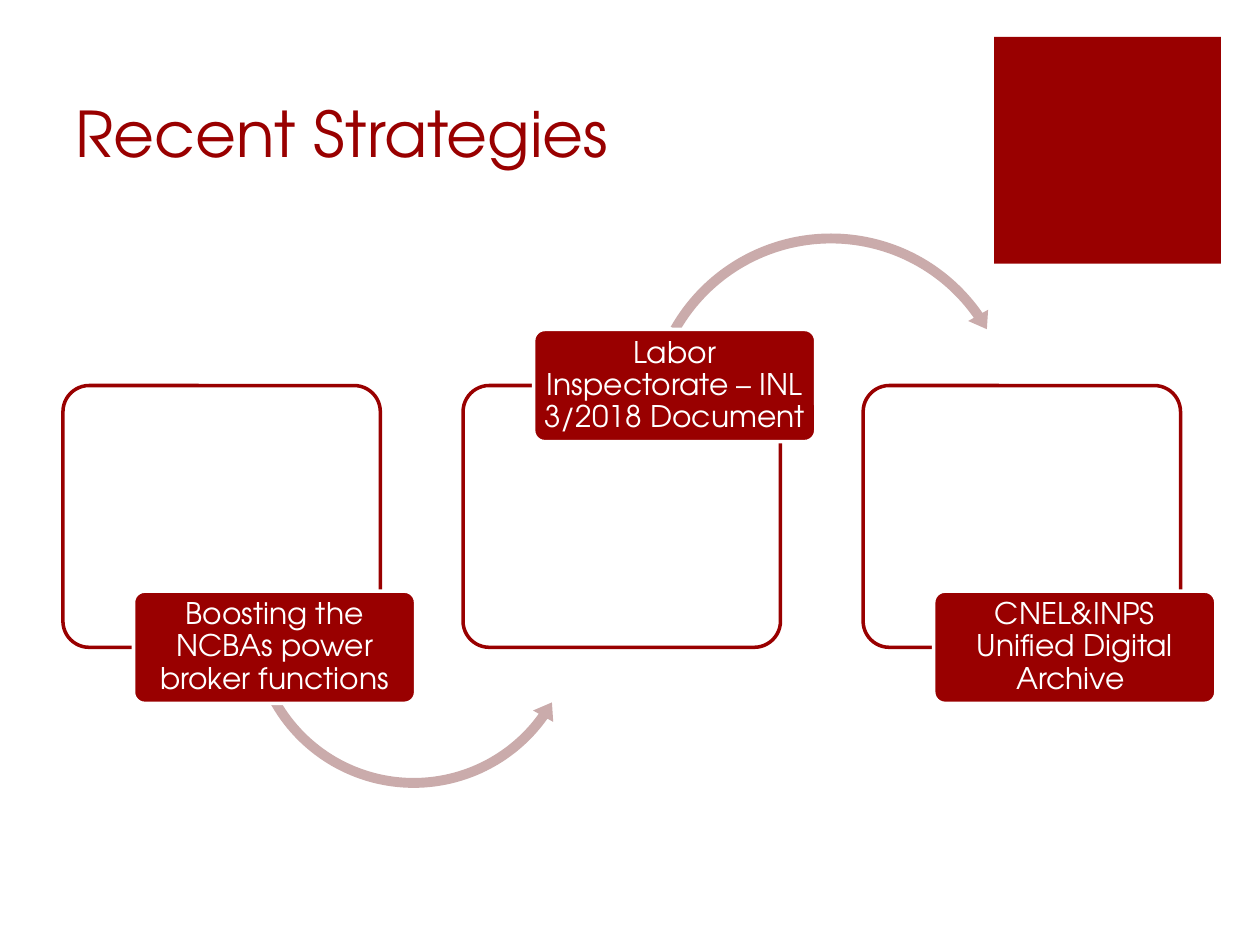
from pptx import Presentation
from pptx.util import Inches, Pt
from pptx.dml.color import RGBColor
from pptx.enum.shapes import MSO_SHAPE as Kind
from pptx.enum.text import PP_ALIGN as Align, MSO_ANCHOR as Anchor
from pptx.oxml.ns import qn
from lxml.etree import SubElement

HUE = {"red": "990000", "rose": "CAABAB", "white": "FFFFFF"}
FONT = "TeX Gyre Adventor"
WIDE, HIGH = Inches(10), Inches(7.5)

STEPS = [
    ("Boosting the NCBAs power broker functions", "low"),
    ("Labor Inspectorate – INL 3/2018 Document", "top"),
    ("CNEL&INPS Unified Digital Archive ", "low"),
]
ARCS = {
    "low": (Kind.LEFT_CIRCULAR_ARROW, 1.105, 0.911, 1.075,
            (0.029, 3.535, 21.29, 90.245, 0.034)),
    "top": (Kind.CIRCULAR_ARROW, 1.159, 0.123, 1.202,
            (0.026, 3.137, 195.108, 125.755, 0.03)),
}


def tint(name):
    return RGBColor.from_string(HUE[name])


def share(box, x, y, w, h):
    left, top, wide, high = box
    return (int(left + x * wide), int(top + y * high),
            int(w * wide), int(h * high))


def draw(slide, kind, box, fill, line=None, adjs=()):
    shape = slide.shapes.add_shape(kind, *box)
    shape.shadow.inherit = False
    shape.fill.solid()
    shape.fill.fore_color.rgb = tint(fill)
    if line:
        shape.line.color.rgb = tint(line)
        shape.line.width = Pt(2)
    else:
        shape.line.fill.background()
    for i, value in enumerate(adjs):
        shape.adjustments[i] = value
    return shape


def style(para, size, hue):
    for run in para.runs:
        run.font.name = FONT
        run.font.size = Pt(size)
        run.font.color.rgb = tint(hue)


def head(slide, box):
    frame = slide.shapes.add_textbox(*box).text_frame
    frame.word_wrap = True
    frame.vertical_anchor = Anchor.BOTTOM
    frame.text = "Recent Strategies"
    style(frame.paragraphs[0], 36, "red")


def card(slide, box):
    shape = draw(slide, Kind.ROUNDED_RECTANGLE, box, "white", "red", [0.1])
    color = shape.fill._xPr.find(qn("a:solidFill"))[0]
    SubElement(color, qn("a:alpha")).set("val", "90000")


def arc(slide, box, side):
    kind, x, y, size, adjs = ARCS[side]
    left, top, wide, high = box
    span = int(size * wide)
    spot = (int(left + x * wide - span / 2),
            int(top + y * high - span / 2), span, span)
    draw(slide, kind, spot, "rose", adjs=adjs)


def label(slide, box, text, side):
    edge = 1 if side == "low" else 0
    spot = share(box, 2 / 9, edge - 3 / 14, 8 / 9, 3 / 7)
    shape = draw(slide, Kind.ROUNDED_RECTANGLE, spot, "red", "white", [0.1])
    frame = shape.text_frame
    frame.word_wrap = True
    frame.vertical_anchor = Anchor.MIDDLE
    frame.margin_left = frame.margin_right = Inches(0.04)
    frame.margin_top = frame.margin_bottom = Inches(0.02)
    frame.text = text
    para = frame.paragraphs[0]
    para.alignment = Align.CENTER
    para.line_spacing = 0.9
    style(para, 17, "white")


def chain(slide, box):
    cell = 0.284
    pitch = (1 - cell) / (len(STEPS) - 1)
    for i, (text, side) in enumerate(STEPS):
        spot = share(box, i * pitch, 0, cell, 1)
        card(slide, spot)
        if i < len(STEPS) - 1:
            arc(slide, spot, side)
        label(slide, spot, text, side)


def main():
    deck = Presentation()
    deck.slide_width, deck.slide_height = WIDE, HIGH
    slide = deck.slides.add_slide(deck.slide_layouts[6])
    page = (0, 0, WIDE, HIGH)
    draw(slide, Kind.RECTANGLE, share(page, 0.789, 0.039, 0.18, 0.24), "red")
    head(slide, share(page, 0.05, 0.047, 0.712, 0.14))
    chain(slide, share(page, 0.05, 0.408, 0.887, 0.277))
    deck.save("out.pptx")


if __name__ == "__main__":
    main()
